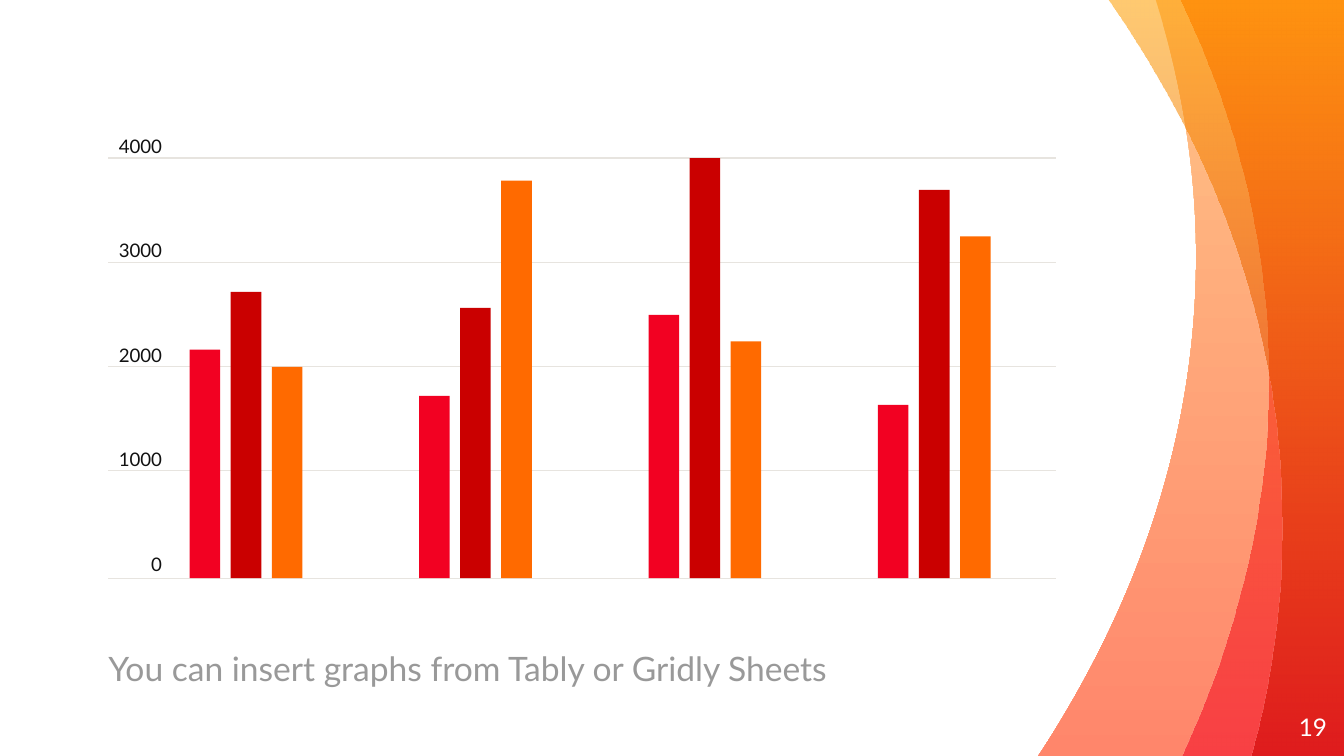
from dataclasses import dataclass

from lxml import etree
from pptx import Presentation
from pptx import util as u
from pptx.dml import color
from pptx.enum import shapes, text
from pptx.oxml import ns

SLIDE_W, SLIDE_H = 720, 405
FONT = "Lato"
COLORS = {
    "caption": "999999", "label": "111111", "number": "FFFFFF", "grid": "E7E4DF",
    "pink": "F20122", "red": "CA0000", "orange": "FF6A00",
    "peach": "FFC486", "salmon": "FF866B", "amber": "FF9F00", "crimson": "CC0000",
}


@dataclass
class Stop:
    color: str
    opacity: int = 100


@dataclass
class Wave:
    """A band whose left edge is two Bezier curves: start, then control, control, end."""
    edge: list
    top: Stop
    bottom: Stop


@dataclass
class BarGroup:
    heights: tuple


# The waves reach slightly past the right and bottom edges
WAVE_RIGHT, WAVE_BOTTOM = 720.7, 406.8
WAVES = [
    Wave([(619.2, 0), (632.9, 43.9), (640.8, 90), (640.8, 137.5),
          (640.8, 233.3), (609.8, 324), (555.1, WAVE_BOTTOM)],
         Stop("peach"), Stop("salmon")),
    Wave([(632.2, 0), (663.1, 64.1), (679.7, 132.5), (679.7, 203),
          (679.7, 274.3), (662.4, 342.7), (632.2, WAVE_BOTTOM)],
         Stop("orange", 72), Stop("pink", 52)),
    Wave([(594, 0), (653.8, 85.7), (686.9, 180.7), (686.9, 281.5),
          (686.9, 324), (681.1, 365.8), (669.6, WAVE_BOTTOM)],
         Stop("amber", 56), Stop("crimson", 57)),
]

# Bar geometry
BASELINE = 309.8
BAR_LEFT, BAR_WIDTH = 101.6, 16.4
BAR_STEP, GROUP_STEP = 22, 122.9
SERIES = ("pink", "red", "orange")
GROUPS = [
    BarGroup((122.4, 153.4, 113.3)),
    BarGroup((97.7, 144.8, 213)),
    BarGroup((141.1, 225.1, 126.9)),
    BarGroup((92.9, 208, 183.2)),
]
GRID_LEFT, GRID_RIGHT = 58, 565.7
GRID_LEVELS = (84.6, 140.6, 196.3, 252, 309.8)
AXIS_LABELS = ("4000", "3000", "2000", "1000", "0")


def rgb(name: str) -> color.RGBColor:
    return color.RGBColor.from_string(COLORS[name])


def curve_edge(band) -> None:
    """Turn the first six line segments into two cubic curves."""
    segments = list(band.element.iter(ns.qn("a:lnTo")))
    for start in (0, 3):
        curve = etree.Element(ns.qn("a:cubicBezTo"))
        segments[start].addprevious(curve)
        for segment in segments[start:start + 3]:
            curve.append(segment[0])
            segment.getparent().remove(segment)


def draw_wave(slide, wave: Wave) -> None:
    outline = wave.edge + [(WAVE_RIGHT, WAVE_BOTTOM), (WAVE_RIGHT, 0)]
    corners = [(u.Pt(x), u.Pt(y)) for x, y in outline]
    builder = slide.shapes.build_freeform(*corners[0])
    builder.add_line_segments(corners[1:], close=True)
    band = builder.convert_to_shape()
    curve_edge(band)
    band.shadow.inherit = False
    band.line.fill.background()
    band.fill.gradient()
    band.fill.gradient_angle = 270
    stops = (wave.top, wave.bottom)
    for gradient_stop, stop in zip(band.fill.gradient_stops, stops):
        gradient_stop.color.rgb = rgb(stop.color)
    for node, stop in zip(band.element.iter(ns.qn("a:gs")), stops):
        if stop.opacity < 100:
            alpha = etree.SubElement(node[0], ns.qn("a:alpha"))
            alpha.set("val", str(stop.opacity * 1000))


def draw_gridline(slide, y: float) -> None:
    gridline = slide.shapes.add_connector(
        shapes.MSO_CONNECTOR.STRAIGHT,
        u.Pt(GRID_LEFT), u.Pt(y), u.Pt(GRID_RIGHT), u.Pt(y))
    gridline.line.color.rgb = rgb("grid")
    gridline.line.width = u.Pt(0.75)
    etree.SubElement(gridline.element.spPr, ns.qn("a:effectLst"))


def draw_bar(slide, left: float, height: float, fill: str) -> None:
    bar = slide.shapes.add_shape(
        shapes.MSO_SHAPE.RECTANGLE,
        u.Pt(left), u.Pt(BASELINE - height), u.Pt(BAR_WIDTH), u.Pt(height))
    bar.shadow.inherit = False
    bar.fill.solid()
    bar.fill.fore_color.rgb = rgb(fill)
    bar.line.fill.background()


def add_text(slide, lines: tuple, *, box: tuple, size: float, ink: str,
             align=text.PP_ALIGN.LEFT, anchor=text.MSO_ANCHOR.TOP,
             first_gap: float = 0, gap: float = 0) -> None:
    frame = slide.shapes.add_textbox(*(u.Pt(v) for v in box)).text_frame
    frame.word_wrap = True
    frame.vertical_anchor = anchor
    frame.margin_left = frame.margin_right = frame.margin_top = frame.margin_bottom = 0
    for i, line in enumerate(lines):
        paragraph = frame.add_paragraph() if i else frame.paragraphs[0]
        paragraph.alignment = align
        paragraph.space_before = u.Pt(gap if i else first_gap)
        run = paragraph.add_run()
        run.text = line
        run.font.name = FONT
        run.font.size = u.Pt(size)
        run.font.color.rgb = rgb(ink)


def main() -> None:
    deck = Presentation()
    deck.slide_width, deck.slide_height = u.Pt(SLIDE_W), u.Pt(SLIDE_H)
    slide = deck.slides.add_slide(deck.slide_layouts[6])

    # Decorative waves on the right
    for wave in WAVES:
        draw_wave(slide, wave)

    # Caption and slide number
    add_text(slide, ("You can insert graphs from Tably or Gridly Sheets",),
             box=(58, 347, 491, 41), size=18, ink="caption", first_gap=3.6)
    add_text(slide, ("19",), box=(667.6, 373.9, 43.2, 31), size=13, ink="number",
             align=text.PP_ALIGN.RIGHT, anchor=text.MSO_ANCHOR.MIDDLE)

    # Grid and axis labels
    for level in GRID_LEVELS:
        draw_gridline(slide, level)
    add_text(slide, AXIS_LABELS, box=(GRID_LEFT, 72, 28.8, 238.3), size=10,
             ink="label", align=text.PP_ALIGN.RIGHT, gap=44)

    # Bars
    for g, group in enumerate(GROUPS):
        for s, (height, fill) in enumerate(zip(group.heights, SERIES)):
            draw_bar(slide, BAR_LEFT + g * GROUP_STEP + s * BAR_STEP, height, fill)

    deck.save("out.pptx")


if __name__ == "__main__":
    main()
